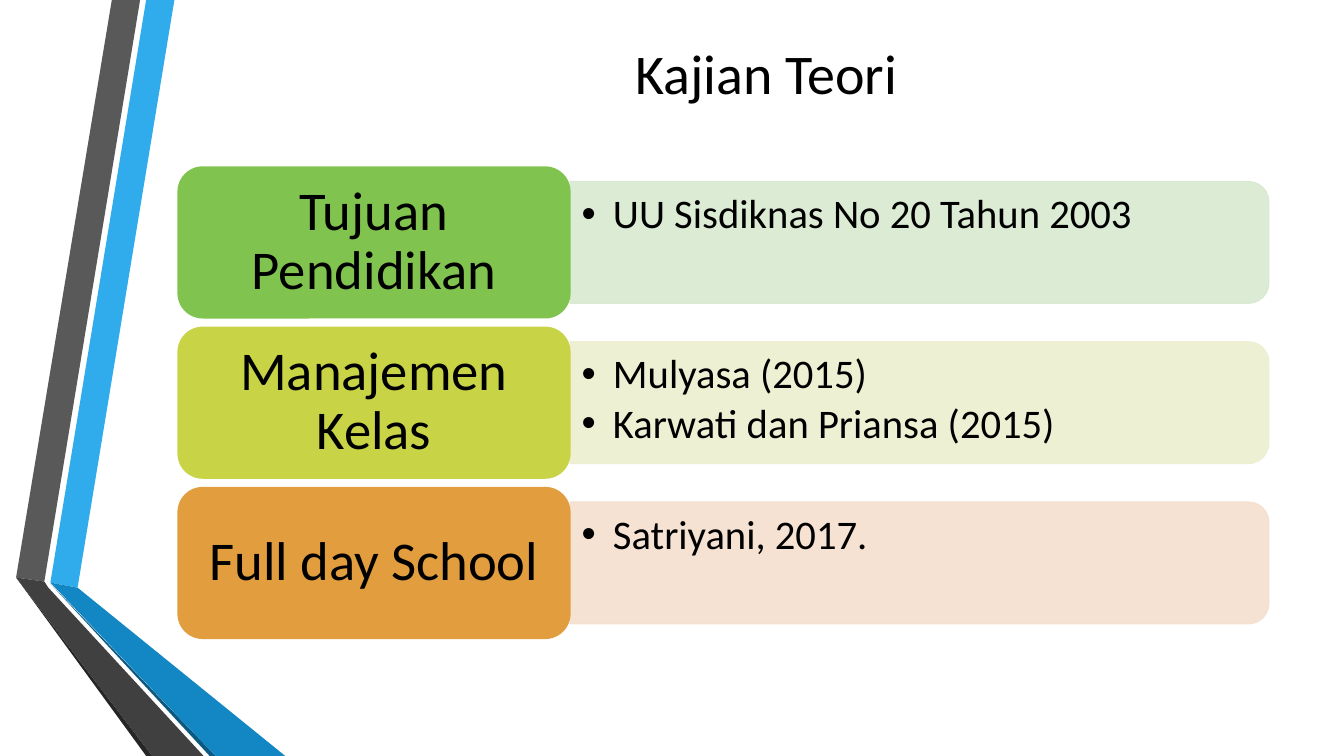
from lxml import etree
from pptx import Presentation
from pptx.dml.color import RGBColor
from pptx.enum.shapes import MSO_SHAPE
from pptx.enum.text import MSO_ANCHOR, PP_ALIGN
from pptx.oxml.ns import qn
from pptx.util import Inches, Pt

ROUNDED = MSO_SHAPE.ROUNDED_RECTANGLE
TOP_ROUNDED = MSO_SHAPE.ROUND_2_SAME_RECTANGLE
MIDDLE = MSO_ANCHOR.MIDDLE
TOP = MSO_ANCHOR.TOP
CENTER = PP_ALIGN.CENTER

BLACK = RGBColor(0x00, 0x00, 0x00)
LIGHT_BLUE = RGBColor(0x30, 0xAC, 0xEC)
BLUE = RGBColor(0x12, 0x87, 0xC3)
DARK_BLUE = RGBColor(0x0C, 0x5A, 0x82)
GRAY = RGBColor(0x59, 0x59, 0x59)
DARK_GRAY = RGBColor(0x40, 0x40, 0x40)
NEAR_BLACK = RGBColor(0x26, 0x26, 0x26)
GREEN = RGBColor(0x80, 0xC3, 0x4F)
PALE_GREEN = RGBColor(0xD8, 0xE9, 0xD0)
LIME = RGBColor(0xC8, 0xD3, 0x46)
PALE_LIME = RGBColor(0xED, 0xEF, 0xCF)
ORANGE = RGBColor(0xE2, 0x9D, 0x3E)
PALE_ORANGE = RGBColor(0xF4, 0xDF, 0xCE)

RIBBONS = [
    (LIGHT_BLUE, [(0.5, 5.78), (0.77, 5.83), (1.73, 0), (1.45, 0)]),
    (GRAY, [(1.39, 0), (1.11, 0), (0.16, 5.73), (0.44, 5.77)]),
    (NEAR_BLACK, [(0.16, 5.73), (1.45, 7.5), (1.51, 7.5)]),
    (DARK_BLUE, [(0.5, 5.79), (2.08, 7.5), (2.14, 7.5)]),
    (BLUE, [(0.5, 5.78), (2.14, 7.5), (2.83, 7.5), (0.77, 5.83)]),
    (DARK_GRAY, [(2.02, 7.5), (0.48, 5.83), (0.44, 5.77), (0.16, 5.73), (1.51, 7.5)]),
]
TOPICS = [
    ("Tujuan Pendidikan", ["UU Sisdiknas No 20 Tahun 2003"], GREEN, PALE_GREEN),
    ("Manajemen Kelas", ["Mulyasa (2015)", "Karwati dan Priansa (2015)"], LIME, PALE_LIME),
    ("Full day School", ["Satriyani, 2017."], ORANGE, PALE_ORANGE),
]
FIRST_TOP = 1.65
ROW_STEP = 1.59
LABEL_HEIGHT = 1.51
BAR_LENGTH = 6.93
BAR_HEIGHT = 1.21
BAR_CENTER = 9.12


def format_text(text_frame, size, anchor, margin_x, margin_y):
    text_frame.word_wrap = True
    text_frame.vertical_anchor = anchor
    text_frame.margin_left = text_frame.margin_right = Inches(margin_x)
    text_frame.margin_top = text_frame.margin_bottom = Inches(margin_y)
    for paragraph in text_frame.paragraphs:
        paragraph.line_spacing = 0.9
        for run in paragraph.runs:
            run.font.name = "Calibri"
            run.font.size = Pt(size)
            run.font.color.rgb = BLACK


presentation = Presentation()
presentation.slide_width = Inches(13.33)
presentation.slide_height = Inches(7.5)
slide = presentation.slides.add_slide(presentation.slide_layouts[5])

for color, points in RIBBONS:
    corners = [(Inches(x), Inches(y)) for x, y in points]
    builder = slide.shapes.build_freeform(*corners[0])
    builder.add_line_segments(corners[1:], close=True)
    ribbon = builder.convert_to_shape()
    ribbon.shadow.inherit = False
    ribbon.fill.solid()
    ribbon.fill.fore_color.rgb = color
    ribbon.line.fill.background()

title = slide.shapes.title
title.left, title.top = Inches(2.12), Inches(0.36)
title.width, title.height = Inches(10.96), Inches(0.79)
title.text_frame.text = "Kajian Teori"
title.text_frame.paragraphs[0].alignment = CENTER
format_text(title.text_frame, 40, MIDDLE, 0.1, 0.05)

for row, (topic, sources, color, pale_color) in enumerate(TOPICS):
    top = FIRST_TOP + row * ROW_STEP
    middle = top + LABEL_HEIGHT / 2

    bar = slide.shapes.add_shape(
        TOP_ROUNDED,
        Inches(BAR_CENTER - BAR_HEIGHT / 2), Inches(middle - BAR_LENGTH / 2),
        Inches(BAR_HEIGHT), Inches(BAR_LENGTH),
    )
    bar.rotation = 90
    bar.shadow.inherit = False
    bar.fill.solid()
    bar.fill.fore_color.rgb = pale_color
    bar.line.color.rgb = pale_color
    bar.line.width = Pt(0.75)
    for color_element in bar.element.spPr.iter(qn("a:srgbClr")):
        etree.SubElement(color_element, qn("a:alpha"), val="90000")

    source_box = slide.shapes.add_textbox(
        Inches(5.65), Inches(top + 0.21), Inches(6.87), Inches(1.09)
    )
    source_box.text_frame.text = "\n".join(sources)
    format_text(source_box.text_frame, 29, TOP, 0.12, 0.06)
    for paragraph in source_box.text_frame.paragraphs:
        paragraph.space_after = Pt(4)
        properties = paragraph._p.get_or_add_pPr()
        properties.set("marL", str(Inches(0.31)))
        properties.set("indent", str(Inches(-0.31)))
        etree.SubElement(properties, qn("a:buFont"), typeface="Arial")
        etree.SubElement(properties, qn("a:buChar"), char="•")

    label = slide.shapes.add_shape(
        ROUNDED, Inches(1.76), Inches(top), Inches(3.9), Inches(LABEL_HEIGHT)
    )
    label.shadow.inherit = False
    label.fill.solid()
    label.fill.fore_color.rgb = color
    label.line.fill.background()
    label.text_frame.text = topic
    label.text_frame.paragraphs[0].alignment = CENTER
    format_text(label.text_frame, 39, MIDDLE, 0.16, 0.08)

presentation.save("out.pptx")
